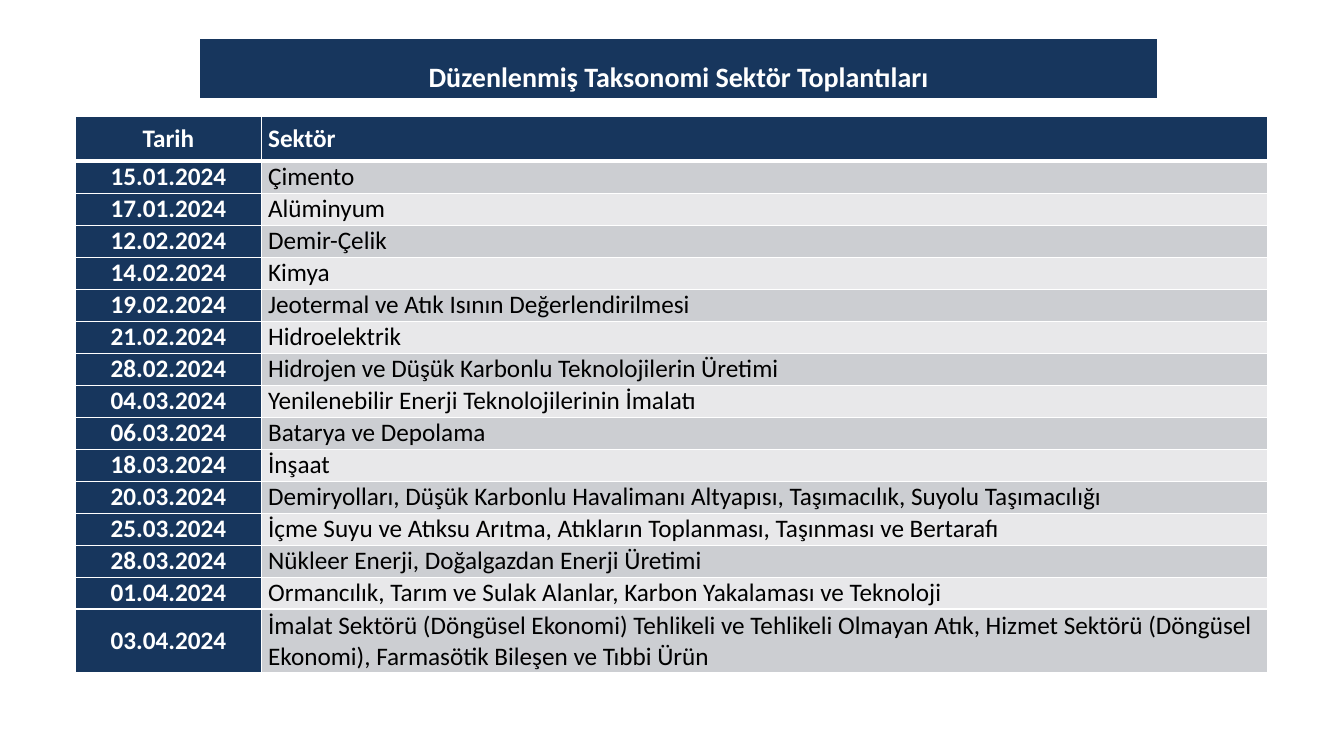
from dataclasses import dataclass

import pptx
import pptx.dml.color
import pptx.enum.text
import pptx.oxml
import pptx.oxml.ns
import pptx.util
from pptx.util import Inches, Pt

RGB = pptx.dml.color.RGBColor.from_string
ALIGN = pptx.enum.text.PP_ALIGN
ANCHOR = pptx.enum.text.MSO_ANCHOR


@dataclass(frozen=True)
class Theme:
    font: str = "Calibri"
    navy: str = "17365D"
    white: str = "FFFFFF"
    black: str = "000000"
    bands: tuple = ("CCCED2", "E8E8EA")
    title_size: int = 20
    table_size: int = 18
    thin_line: int = 1
    header_line: int = 3


THEME = Theme()

TITLE = "Düzenlenmiş Taksonomi Sektör Toplantıları"
HEADINGS = ("Tarih", "Sektör")
MEETINGS = (
    ("15.01.2024", "Çimento"),
    ("17.01.2024", "Alüminyum"),
    ("12.02.2024", "Demir-Çelik"),
    ("14.02.2024", "Kimya"),
    ("19.02.2024", "Jeotermal ve Atık Isının Değerlendirilmesi"),
    ("21.02.2024", "Hidroelektrik"),
    ("28.02.2024", "Hidrojen ve Düşük Karbonlu Teknolojilerin Üretimi"),
    ("04.03.2024", "Yenilenebilir Enerji Teknolojilerinin İmalatı"),
    ("06.03.2024", "Batarya ve Depolama"),
    ("18.03.2024", "İnşaat"),
    ("20.03.2024", "Demiryolları, Düşük Karbonlu Havalimanı Altyapısı, "
                   "Taşımacılık, Suyolu Taşımacılığı"),
    ("25.03.2024", "İçme Suyu ve Atıksu Arıtma, Atıkların Toplanması, "
                   "Taşınması ve Bertarafı"),
    ("28.03.2024", "Nükleer Enerji, Doğalgazdan Enerji Üretimi"),
    ("01.04.2024", "Ormancılık, Tarım ve Sulak Alanlar, Karbon Yakalaması "
                   "ve Teknoloji"),
    ("03.04.2024", "İmalat Sektörü (Döngüsel Ekonomi) Tehlikeli ve Tehlikeli "
                   "Olmayan Atık, Hizmet Sektörü (Döngüsel Ekonomi), "
                   "Farmasötik Bileşen ve Tıbbi Ürün"),
)
BANNER_HEIGHTS = (0.26, 0.51)
COLUMN_WIDTHS = (1.84, 9.98)
TABLE_HEIGHT, HEADER_HEIGHT = 5.53, 0.45


def add_sized_table(slide, left, top, widths, heights):
    table = slide.shapes.add_table(
        len(heights), len(widths), Inches(left), Inches(top),
        Inches(sum(widths)), Inches(sum(heights))).table
    for column, width in zip(table.columns, widths):
        column.width = Inches(width)
    for row, height in zip(table.rows, heights):
        row.height = Inches(height)
    return table


def style_cell(cell, color, top=THEME.thin_line, bottom=THEME.thin_line):
    """Give the cell white borders, then its fill: the XML needs this order."""
    properties = cell._tc.get_or_add_tcPr()
    widths = {"L": THEME.thin_line, "R": THEME.thin_line, "T": top, "B": bottom}
    for side, width in widths.items():
        properties.append(pptx.oxml.parse_xml(
            f'<a:ln{side} {pptx.oxml.ns.nsdecls("a")} w="{Pt(width)}">'
            f'<a:solidFill><a:srgbClr val="{THEME.white}"/></a:solidFill>'
            f'</a:ln{side}>'))
    cell.fill.solid()
    cell.fill.fore_color.rgb = RGB(color)


def write_cell(cell, text, size, color, bold, align):
    cell.text = text
    paragraph = cell.text_frame.paragraphs[0]
    paragraph.alignment = align
    font = paragraph.font
    font.name, font.size, font.bold = THEME.font, Pt(size), bold
    font.color.rgb = RGB(color)


def add_title_banner(slide):
    """Add a navy title row with a white spacer row under it."""
    banner = add_sized_table(slide, 1.98, 0.38, (9.5,), BANNER_HEIGHTS)
    title, spacer = banner.cell(0, 0), banner.cell(1, 0)
    style_cell(title, THEME.navy, bottom=THEME.header_line)
    write_cell(title, TITLE, THEME.title_size, THEME.white, True, ALIGN.CENTER)
    title.text_frame.paragraphs[0].line_spacing = 1.5
    style_cell(spacer, THEME.white, top=THEME.header_line)


def fill_meeting_cell(cell, text, row, column):
    is_header, is_date = row == 0, column == 0
    emphasized = is_header or is_date
    cell.vertical_anchor = ANCHOR.MIDDLE
    cell.margin_left = cell.margin_right = Inches(0.07)
    cell.margin_top = cell.margin_bottom = 0
    style_cell(cell, THEME.navy if emphasized else THEME.bands[(row - 1) % 2],
               top=THEME.header_line if row == 1 else THEME.thin_line,
               bottom=THEME.header_line if is_header else THEME.thin_line)
    write_cell(cell, text, THEME.table_size,
               THEME.white if emphasized else THEME.black,
               emphasized, ALIGN.CENTER if is_date else ALIGN.LEFT)


def add_meeting_table(slide):
    # The last sector list takes two lines, hence one extra row height.
    row_height = (TABLE_HEIGHT - HEADER_HEIGHT) / (len(MEETINGS) + 1)
    heights = [HEADER_HEIGHT, *[row_height] * (len(MEETINGS) - 1), 2 * row_height]
    table = add_sized_table(slide, 0.75, 1.15, COLUMN_WIDTHS, heights)
    table.first_col = True
    for row, texts in enumerate((HEADINGS, *MEETINGS)):
        for column, text in enumerate(texts):
            fill_meeting_cell(table.cell(row, column), text, row, column)


def main():
    presentation = pptx.Presentation()
    presentation.slide_width = Inches(13.33)
    presentation.slide_height = Inches(7.5)
    blank = presentation.slide_layouts[6]
    slide = presentation.slides.add_slide(blank)
    add_title_banner(slide)
    add_meeting_table(slide)
    presentation.save("out.pptx")


if __name__ == "__main__":
    main()
